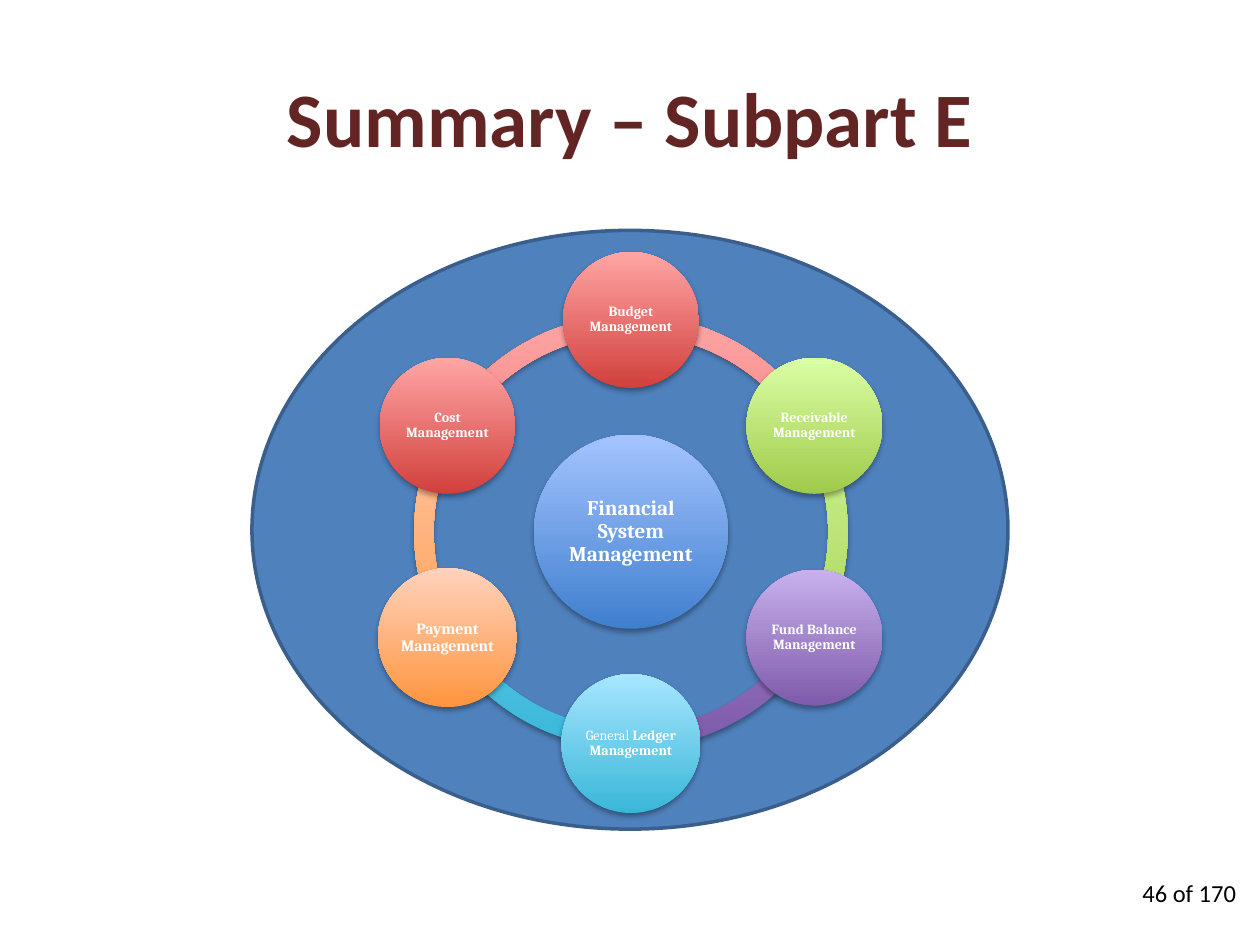
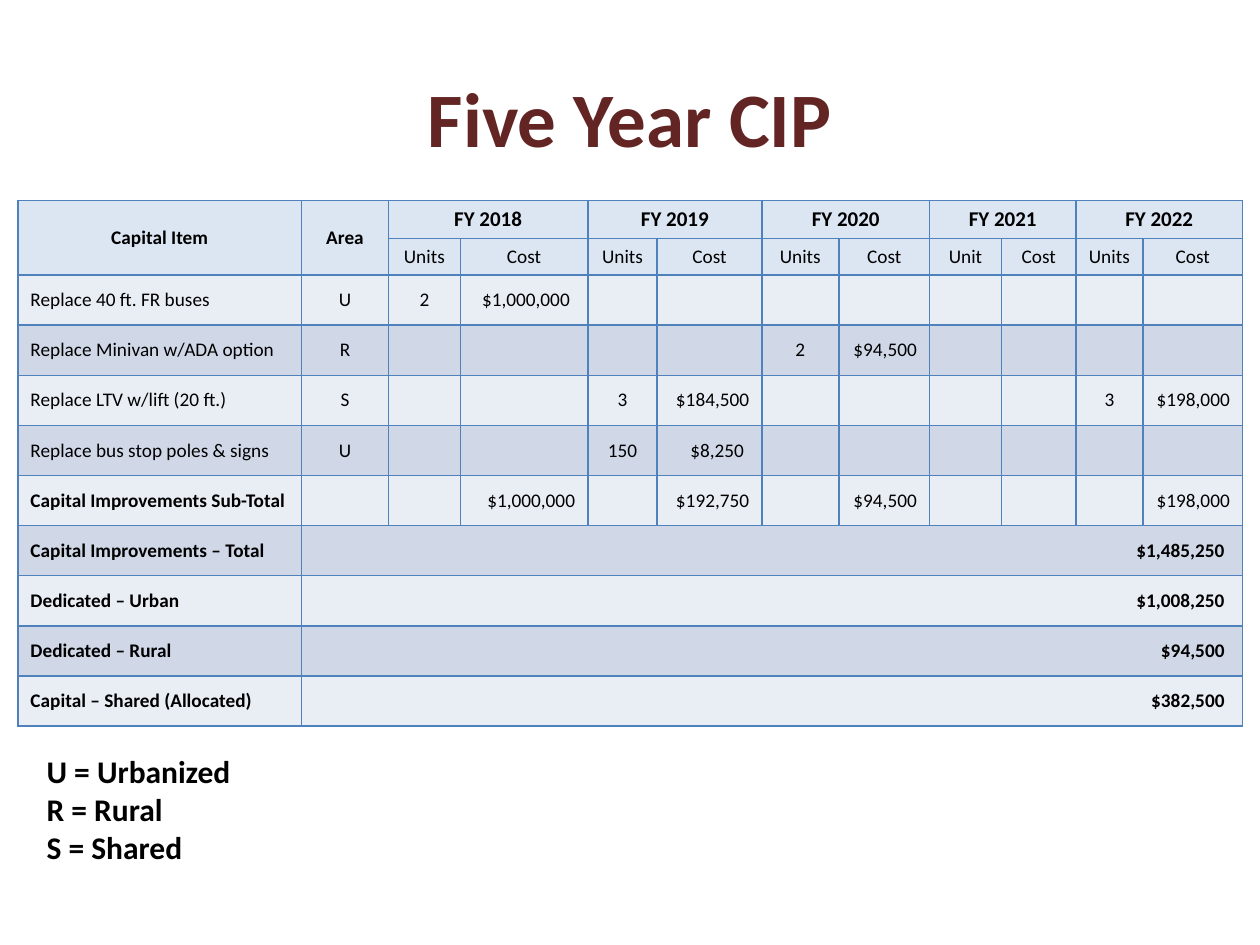
from math import cos, radians, sin

from lxml import etree
from pptx import Presentation
from pptx.dml.color import RGBColor
from pptx.enum.shapes import MSO_SHAPE
from pptx.enum.text import MSO_ANCHOR, MSO_AUTO_SIZE, PP_ALIGN
from pptx.oxml.ns import qn
from pptx.util import Cm, Pt

OVAL, ARC = MSO_SHAPE.OVAL, MSO_SHAPE.BLOCK_ARC
LEFT, CENTER, RIGHT = PP_ALIGN.LEFT, PP_ALIGN.CENTER, PP_ALIGN.RIGHT
MIDDLE = MSO_ANCHOR.MIDDLE
NO_AUTOFIT = MSO_AUTO_SIZE.NONE
TITLE_ONLY = 5

BODY_FONT, DIAGRAM_FONT = "Calibri", "Cambria"
COLORS = {
    "title": "632523", "text": "000000", "white": "FFFFFF",
    "backdrop": "4F81BD", "backdrop line": "3A5F8C",
    "grid": "4F81BD", "header": "DCE6F2", "light": "E9EDF4", "dark": "D0D8E8",
}
# Bottom and top colour of each gradient
GRADIENTS = {
    "red": ("D1403C", "FFA6A5"), "green": ("A0CA4A", "DAFFA5"),
    "purple": ("7F5BAB", "C8B0ED"), "teal": ("39B7D8", "A7E6FF"),
    "orange": ("FF953E", "FFD2BD"), "blue": ("3F7FCE", "A4C4FF"),
}

# Ring diagram: runs (text, bold), gradient, diameter in cm, text size
RING_CENTER = (12.72, 10.72)
RING_DIAMETER, ORBIT = 8.74, 4.27
RING_NODES = [
    ([("Budget Management", True)], "red", 2.74, 8),
    ([("Receivable Management", True)], "green", 2.74, 8),
    ([("Fund Balance Management", True)], "purple", 2.74, 8),
    ([("General ", False), ("Ledger Management", True)], "teal", 2.8, 8),
    ([("Payment Management", True)], "orange", 2.8, 9),
    ([("Cost Management", True)], "red", 2.74, 8),
]

# Capital plan: item, area, {year: (units, cost)}
YEARS = [2018, 2019, 2020, 2021, 2022]
UNIT_HEADINGS = {2021: "Unit"}
CAPITAL_ITEMS = [
    ("Replace 40 ft. FR buses", "U", {2018: ("2", "$1,000,000")}),
    ("Replace Minivan w/ADA option", "R", {2020: ("2", "$94,500")}),
    ("Replace LTV w/lift (20 ft.)", "S",
     {2019: ("3", "$184,500"), 2022: ("3", "$198,000")}),
    ("Replace bus stop poles & signs", "U", {2019: ("150", "$8,250")}),
    ("Capital Improvements Sub-Total", "",
     {2018: ("", "$1,000,000"), 2019: ("", "$192,750"),
      2020: ("", "$94,500"), 2022: ("", "$198,000")}),
]
TOTALS = [
    ("Capital Improvements – Total", "$1,485,250"),
    ("Dedicated – Urban", "$1,008,250"),
    ("Dedicated – Rural", "$94,500"),
    ("Capital – Shared (Allocated)", "$382,500"),
]
SUBTOTAL_ROW = 6
INDENTED_COSTS = {(2, 3), (5, 5)}
COLUMN_WIDTHS = [5.72, 1.75, 1.45, 2.57, 1.4, 2.11,
                 1.55, 1.83, 1.45, 1.5, 1.35, 2.01]
HEADER_HEIGHT, ROW_HEIGHT = 0.66, 1.01


def rgb(name):
    return RGBColor.from_string(COLORS.get(name, name))


def add_span(para, text, size, color="text", bold=False, font=BODY_FONT):
    span = para.add_run()
    span.text = text
    span.font.name, span.font.size, span.font.bold = font, Pt(size), bold
    span.font.color.rgb = rgb(color)


def add_titled_page(deck, title):
    page = deck.slides.add_slide(deck.slide_layouts[TITLE_ONLY])
    box = page.shapes.title
    box.left, box.top, box.width, box.height = Cm(1.27), Cm(0.76), Cm(22.86), Cm(3.18)
    frame = box.text_frame
    frame.auto_size, frame.vertical_anchor = NO_AUTOFIT, MIDDLE
    para = frame.paragraphs[0]
    para.alignment = CENTER
    add_span(para, title, 44, "title", bold=True)
    return page


def add_text_box(page, place, lines, size, align=LEFT, bold=False, wrap=True):
    frame = page.shapes.add_textbox(*map(Cm, place)).text_frame
    frame.word_wrap = wrap
    for index, line in enumerate(lines):
        para = frame.add_paragraph() if index else frame.paragraphs[0]
        para.alignment = align
        add_span(para, line, size, bold=bold)


# Ring diagram

def add_centered_shape(page, kind, center, width, height):
    shape = page.shapes.add_shape(kind, Cm(center[0] - width / 2),
                                  Cm(center[1] - height / 2), Cm(width), Cm(height))
    shape.shadow.inherit = False
    return shape


def add_glossy_shape(page, kind, center, diameter, gradient):
    shape = add_centered_shape(page, kind, center, diameter, diameter)
    shape.line.fill.background()
    shape.fill.gradient()
    shape.fill.gradient_angle = 90
    for stop, color in zip(shape.fill.gradient_stops, GRADIENTS[gradient]):
        stop.color.rgb = rgb(color)
    # Soft shadow below
    effects = shape._element.spPr.find(qn("a:effectLst"))
    shadow = etree.SubElement(effects, qn("a:outerShdw"), blurRad="40000",
                              dist="23000", dir="5400000", rotWithShape="0")
    tone = etree.SubElement(shadow, qn("a:srgbClr"), val="000000")
    etree.SubElement(tone, qn("a:alpha"), val="35000")
    return shape


def add_ring_arc(page, start, gradient):
    arc = add_glossy_shape(page, ARC, RING_CENTER, RING_DIAMETER, gradient)
    # Angles are stored in 1/60000 degree, adjustments in 1/100000
    for index, angle in enumerate((start, start + 60)):
        arc.adjustments[index] = angle % 360 * 0.6
    arc.adjustments[2] = 0.045


def add_circle(page, center, diameter, gradient, runs, size):
    circle = add_glossy_shape(page, OVAL, center, diameter, gradient)
    frame = circle.text_frame
    frame.word_wrap, frame.vertical_anchor = True, MIDDLE
    frame.margin_left = frame.margin_right = Cm(0.03)
    frame.margin_top = frame.margin_bottom = Cm(0.03)
    para = frame.paragraphs[0]
    para.alignment, para.line_spacing = CENTER, 0.9
    for text, bold in runs:
        add_span(para, text, size, "white", bold, DIAGRAM_FONT)


def add_ring_diagram(page):
    nodes = [(270 + 60 * index, node) for index, node in enumerate(RING_NODES)]
    for angle, (_, gradient, _, _) in reversed(nodes):
        add_ring_arc(page, angle, gradient)
    add_circle(page, RING_CENTER, 3.91, "blue",
               [("Financial System Management", True)], 12)
    for angle, (runs, gradient, diameter, size) in nodes:
        center = (RING_CENTER[0] + ORBIT * cos(radians(angle)),
                  RING_CENTER[1] + ORBIT * sin(radians(angle)))
        add_circle(page, center, diameter, gradient, runs, size)


# Capital plan table

def style_cell(cell, fill):
    properties = cell._tc.get_or_add_tcPr()
    for side in ("lnL", "lnR", "lnT", "lnB"):
        line = etree.SubElement(properties, qn(f"a:{side}"), w="12700")
        solid = etree.SubElement(line, qn("a:solidFill"))
        etree.SubElement(solid, qn("a:srgbClr"), val=COLORS["grid"])
    cell.fill.solid()
    cell.fill.fore_color.rgb = rgb(fill)
    cell.vertical_anchor = MIDDLE
    para = cell.text_frame.paragraphs[0]
    etree.SubElement(para._p, qn("a:endParaRPr"), sz="1100")


def write_cell(cell, text, align=CENTER, bold=False, size=11, indented=False):
    if not text:
        return
    if indented:
        cell.margin_right = Cm(0.36)
    para = cell.text_frame.paragraphs[0]
    para.alignment = align
    add_span(para, text, size, bold=bold)


def write_header(table):
    for column, heading in enumerate(("Capital Item", "Area")):
        table.cell(0, column).merge(table.cell(1, column))
        write_cell(table.cell(0, column), heading, bold=True)
    for index, year in enumerate(YEARS):
        column = 2 + 2 * index
        table.cell(0, column).merge(table.cell(0, column + 1))
        write_cell(table.cell(0, column), f"FY {year}", bold=True, size=12)
        write_cell(table.cell(1, column), UNIT_HEADINGS.get(year, "Units"))
        write_cell(table.cell(1, column + 1), "Cost")


def add_capital_table(page):
    row_count = 2 + len(CAPITAL_ITEMS) + len(TOTALS)
    table = page.shapes.add_table(row_count, len(COLUMN_WIDTHS), Cm(0.36), Cm(4.04),
                                  Cm(24.69), Cm(10.62)).table
    table.first_row = table.horz_banding = False
    for column, width in zip(table.columns, COLUMN_WIDTHS):
        column.width = Cm(width)
    for index, row in enumerate(table.rows):
        row.height = Cm(HEADER_HEIGHT if index < 2 else ROW_HEIGHT)
        fill = "header" if index < 2 else ("light", "dark")[index % 2]
        for cell in row.cells:
            style_cell(cell, fill)
    write_header(table)

    # Items with units and cost per year
    for row, (item, area, purchases) in enumerate(CAPITAL_ITEMS, 2):
        write_cell(table.cell(row, 0), item, LEFT, bold=row == SUBTOTAL_ROW)
        write_cell(table.cell(row, 1), area)
        for year, (units, cost) in purchases.items():
            column = 2 + 2 * YEARS.index(year)
            write_cell(table.cell(row, column), units)
            write_cell(table.cell(row, column + 1), cost, RIGHT,
                       indented=(row, column + 1) in INDENTED_COSTS)

    # Totals across all years
    for row, (label, amount) in enumerate(TOTALS, 2 + len(CAPITAL_ITEMS)):
        table.cell(row, 1).merge(table.cell(row, len(COLUMN_WIDTHS) - 1))
        write_cell(table.cell(row, 0), label, LEFT, bold=True)
        write_cell(table.cell(row, 1), amount, RIGHT, bold=True, indented=True)


def build_summary_page(deck):
    page = add_titled_page(deck, "Summary – Subpart E")
    backdrop = add_centered_shape(page, OVAL, (12.7, 10.68), 15.24, 12.07)
    backdrop.fill.solid()
    backdrop.fill.fore_color.rgb = rgb("backdrop")
    backdrop.line.color.rgb = rgb("backdrop line")
    backdrop.line.width = Pt(2)
    add_ring_diagram(page)
    add_text_box(page, (22.17, 17.58, 3, 1.02), ["46 of 170"], 14, RIGHT)


def build_plan_page(deck):
    page = add_titled_page(deck, "Five Year CIP")
    add_capital_table(page)
    add_text_box(page, (0.69, 15.04, 4.27, 2.57),
                 ["U = Urbanized", "R = Rural", "S = Shared"], 18,
                 bold=True, wrap=False)


def main():
    deck = Presentation()
    deck.slide_width, deck.slide_height = Cm(25.4), Cm(19.05)
    build_summary_page(deck)
    build_plan_page(deck)
    deck.save("out.pptx")


if __name__ == "__main__":
    main()
